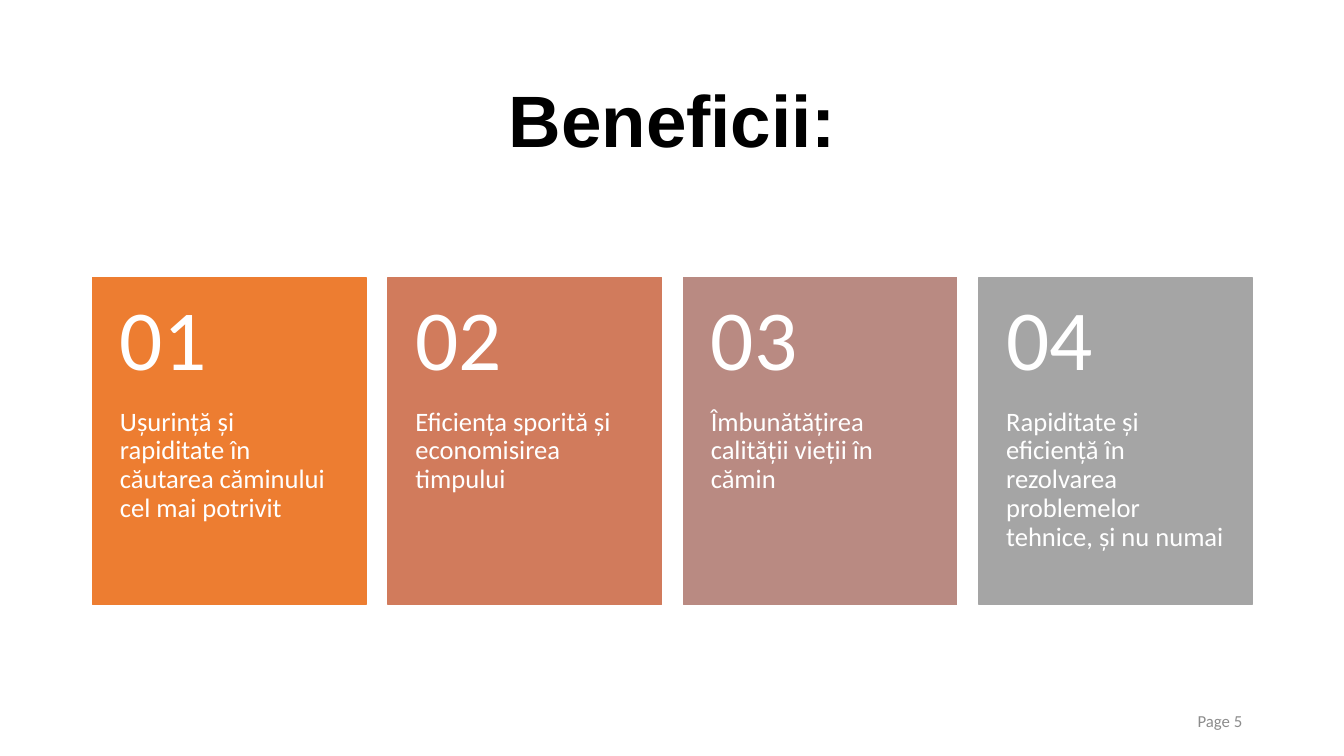
import pptx
import pptx.util
import pptx.dml.color
import pptx.enum.shapes
import pptx.enum.text
from pptx.util import Inches

ALIGN = pptx.enum.text.PP_ALIGN
ANCHOR = pptx.enum.text.MSO_ANCHOR

CARDS = [
    ("ED7D31", "Ușurință și rapiditate în căutarea căminului cel mai potrivit"),
    ("D17B5C", "Eficiența sporită și economisirea timpului"),
    ("B98A82", "Îmbunătățirea calității vieții în cămin"),
    ("A5A5A5", "Rapiditate și eficiență în rezolvarea problemelor tehnice, și nu numai"),
]
MARGIN, CARD_TOP = 0.92, 2.75
CARD_WIDTH, CARD_HEIGHT, CARD_STEP = 2.71, 3.25, 2.93
NUMBER_HEIGHT = 1.3


def color(hex_value):
    return pptx.dml.color.RGBColor.from_string(hex_value)


def add_text(slide, box, text, size, text_color, font="Calibri", bold=False,
             align=ALIGN.LEFT, anchor=ANCHOR.MIDDLE, spacing=0.9,
             insets=(0.1, 0.05, 0.1, 0.05)):
    shape = slide.shapes.add_textbox(*[Inches(value) for value in box])
    frame = shape.text_frame
    frame.word_wrap = True
    frame.vertical_anchor = anchor
    (frame.margin_left, frame.margin_top,
     frame.margin_right, frame.margin_bottom) = [Inches(value) for value in insets]
    frame.text = text
    paragraph = frame.paragraphs[0]
    paragraph.alignment = align
    paragraph.line_spacing = spacing
    run_font = paragraph.runs[0].font
    run_font.name = font
    run_font.size = pptx.util.Pt(size)
    run_font.bold = bold
    run_font.color.rgb = color(text_color)


def add_card(slide, index, fill, text):
    left = MARGIN + index * CARD_STEP
    # Coloured panel
    panel = slide.shapes.add_shape(
        pptx.enum.shapes.MSO_SHAPE.RECTANGLE, Inches(left), Inches(CARD_TOP),
        Inches(CARD_WIDTH), Inches(CARD_HEIGHT))
    panel.shadow.inherit = False
    panel.fill.solid()
    panel.fill.fore_color.rgb = color(fill)
    panel.line.color.rgb = color(fill)
    panel.line.width = pptx.util.Pt(1)
    # Benefit below, number above
    add_text(slide, (left, CARD_TOP + NUMBER_HEIGHT, CARD_WIDTH, CARD_HEIGHT - NUMBER_HEIGHT),
             text, 19, "FFFFFF", anchor=ANCHOR.TOP, insets=(0.27, 0, 0.27, 0.36))
    add_text(slide, (left, CARD_TOP, CARD_WIDTH, NUMBER_HEIGHT),
             f"{index + 1:02d}", 61, "FFFFFF", insets=(0.27, 0.18, 0.27, 0.18))


def main():
    presentation = pptx.Presentation()
    presentation.slide_width = Inches(13.33)
    presentation.slide_height = Inches(7.5)
    slide = presentation.slides.add_slide(presentation.slide_layouts[6])

    # Title and page number
    add_text(slide, (MARGIN, 0.61, 11.5, 1.24), "Beneficii:", 52, "000000",
             font="Arial", bold=True, align=ALIGN.CENTER)
    add_text(slide, (9.42, 6.95, 3, 0.4), "Page 5", 12, "8C8C8C",
             align=ALIGN.RIGHT, spacing=1.0)

    # Row of numbered cards
    for index, (fill, text) in enumerate(CARDS):
        add_card(slide, index, fill, text)

    presentation.save("out.pptx")


if __name__ == "__main__":
    main()
